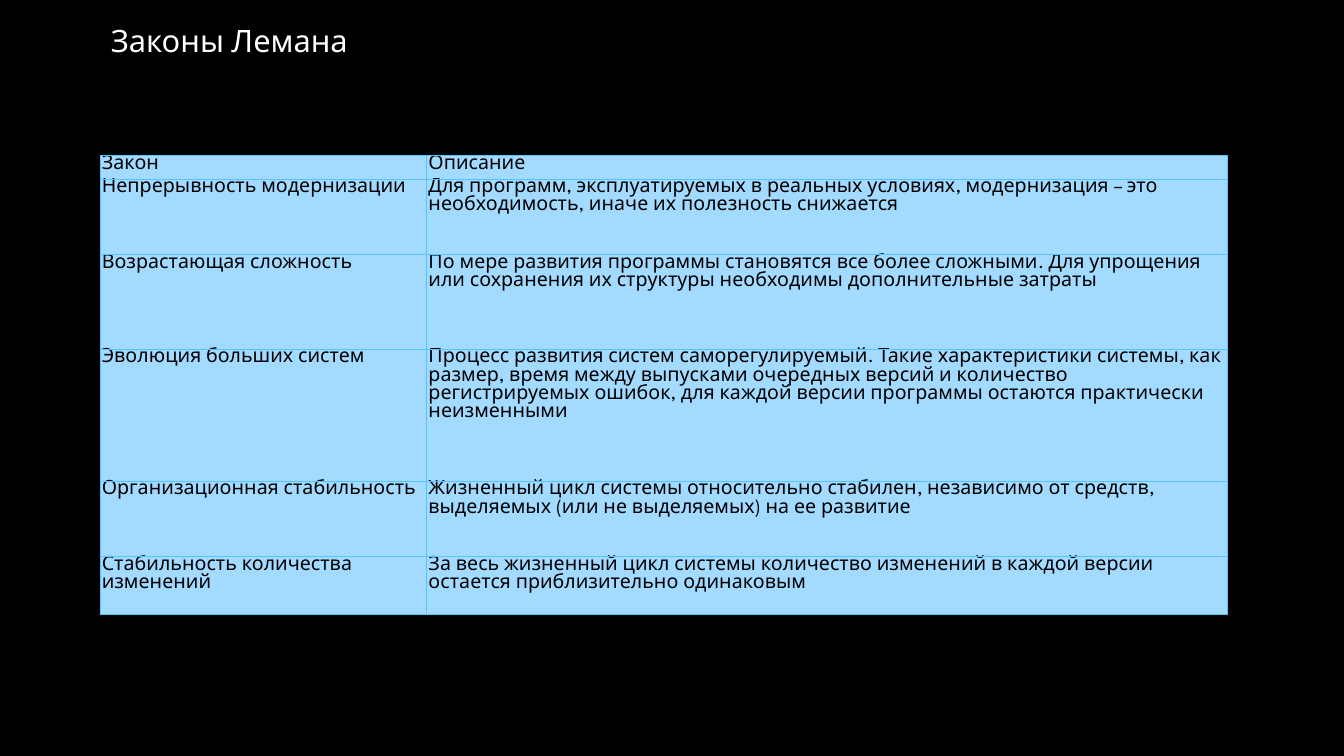
from dataclasses import dataclass

from lxml.etree import SubElement
from pptx import Presentation
from pptx.dml.color import RGBColor
from pptx.oxml.ns import qn
from pptx.util import Inches, Pt


@dataclass(frozen=True)
class Theme:
    font: str = "League Spartan"
    background: str = "000000"
    title: str = "FFFFFF"
    text: str = "000000"
    cell: str = "A3DAFF"
    border: str = "56C5FF"
    title_size: float = 22
    text_size: float = 14
    border_width: float = 0.5


THEME = Theme()
COLUMNS = [3.24, 7.94]
ROWS = [0.19, 0.75, 0.94, 1.31, 0.75, 0.57]
LAWS = [
    ("Закон", "Описание"),
    ("Непрерывность модернизации",
     "Для программ, эксплуатируемых в реальных условиях, модернизация – это "
     "необходимость, иначе их полезность снижается"),
    ("Возрастающая сложность",
     "По мере развития программы становятся все более сложными. Для упрощения "
     "или сохранения их структуры необходимы дополнительные затраты"),
    ("Эволюция больших систем",
     "Процесс развития систем саморегулируемый. Такие характеристики системы, как "
     "размер, время между выпусками очередных версий и количество "
     "регистрируемых ошибок, для каждой версии программы остаются практически "
     "неизменными"),
    ("Организационная стабильность",
     "Жизненный цикл системы относительно стабилен, независимо от средств, "
     "выделяемых (или не выделяемых) на ее развитие"),
    ("Стабильность количества изменений",
     "За весь жизненный цикл системы количество изменений в каждой версии "
     "остается приблизительно одинаковым"),
]


def write(tf, text, size, color, spacing):
    tf.word_wrap = True
    tf.text = text
    p = tf.paragraphs[0]
    p.line_spacing = spacing
    for r in p.runs:
        r.font.name = THEME.font
        r.font.size = Pt(size)
        r.font.color.rgb = RGBColor.from_string(color)


def add_title(s, text):
    sp = s.shapes.add_textbox(Inches(1), Inches(0.21), Inches(11.18), Inches(1.02))
    write(sp.text_frame, text, THEME.title_size, THEME.title, 0.9)


def add_borders(cell):
    tc_pr = cell._tc.get_or_add_tcPr()
    for i, side in enumerate(("a:lnL", "a:lnR", "a:lnT", "a:lnB")):
        ln = tc_pr.makeelement(qn(side), {"w": str(Pt(THEME.border_width))})
        fill = SubElement(ln, qn("a:solidFill"))
        SubElement(fill, qn("a:srgbClr"), val=THEME.border)
        tc_pr.insert(i, ln)


def format_cell(cell, text):
    cell.margin_left = cell.margin_right = Inches(0.02)
    cell.margin_top = cell.margin_bottom = 0
    cell.fill.solid()
    cell.fill.fore_color.rgb = RGBColor.from_string(THEME.cell)
    write(cell.text_frame, text, THEME.text_size, THEME.text, 1.0)
    add_borders(cell)


def add_laws_table(s):
    table = s.shapes.add_table(
        len(ROWS), len(COLUMNS), Inches(0.99), Inches(1.54),
        Inches(sum(COLUMNS)), Inches(sum(ROWS))).table
    for column, width in zip(table.columns, COLUMNS):
        column.width = Inches(width)
    for row, height, texts in zip(table.rows, ROWS, LAWS):
        row.height = Inches(height)
        for cell, text in zip(row.cells, texts):
            format_cell(cell, text)


def main():
    prs = Presentation()
    prs.slide_width, prs.slide_height = Inches(13.33), Inches(7.5)
    s = prs.slides.add_slide(prs.slide_layouts[6])
    s.background.fill.solid()
    s.background.fill.fore_color.rgb = RGBColor.from_string(THEME.background)
    add_title(s, "Законы Лемана")
    add_laws_table(s)
    prs.save("out.pptx")


if __name__ == "__main__":
    main()
